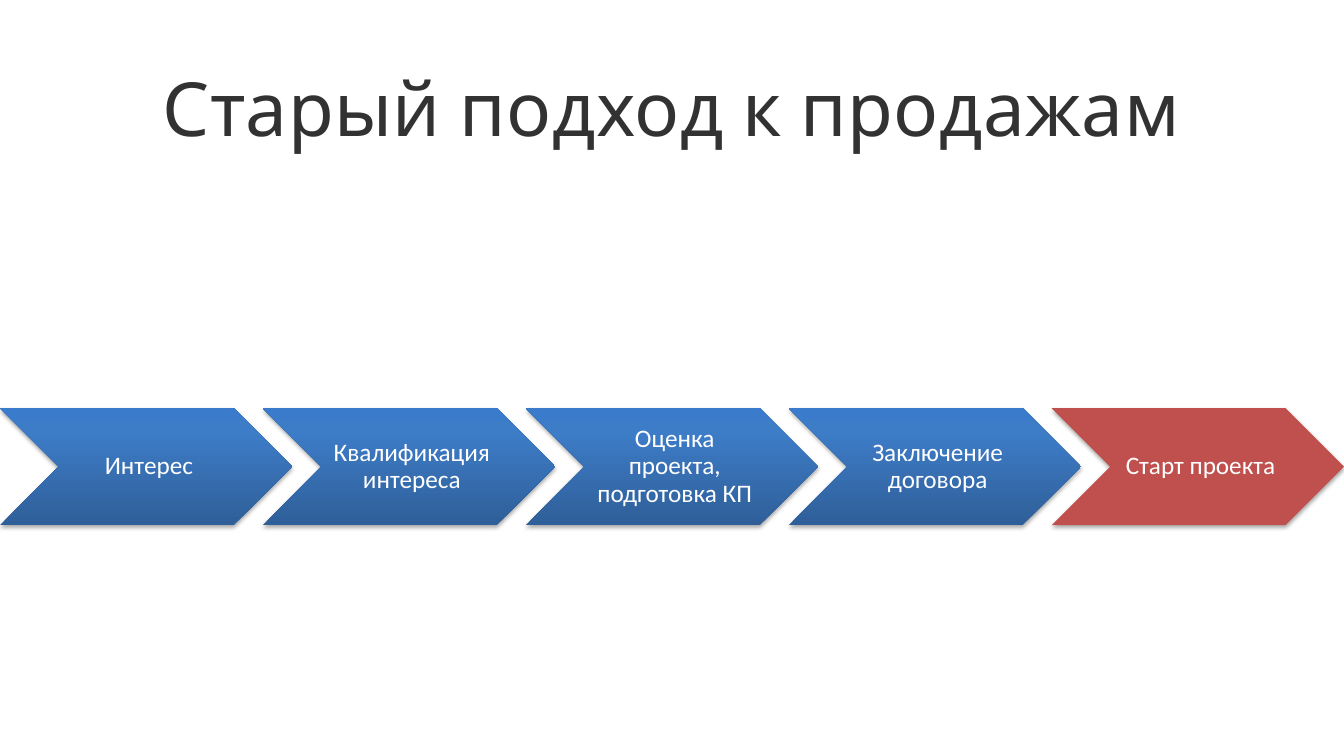
"""Build the slide on the old sales approach: a title over a five-step chevron chain."""
from copy import deepcopy
from dataclasses import dataclass

from lxml import etree
from pptx import Presentation
from pptx.dml.color import RGBColor
from pptx.enum.shapes import MSO_SHAPE
from pptx.enum.text import MSO_ANCHOR, PP_ALIGN
from pptx.oxml.ns import qn
from pptx.util import Pt

CHEVRON = MSO_SHAPE.CHEVRON
MIDDLE = MSO_ANCHOR.MIDDLE
CENTER = PP_ALIGN.CENTER


@dataclass(frozen=True)
class Theme:
    title_font: str = "Karla"
    title_size: float = 53.3
    title_color: str = "323232"
    step_font: str = "Calibri"
    step_size: float = 18
    step_color: str = "FFFFFF"
    step_gradient: tuple = ((0, "2F5F99"), (0.8, "3D7CC7"), (1, "3A7CCB"))
    start_fill: str = "C0504D"
    shadow: str = "000000"


THEME = Theme()
SLIDE_WIDTH, SLIDE_HEIGHT = 960, 540
STEP_TOP, STEP_WIDTH, STEP_HEIGHT = 291.6, 208.8, 83.5
STEPS = [
    "Интерес",
    "Квалификация интереса",
    "Оценка проекта, подготовка КП",
    "Заключение договора",
    "Старт проекта",
]


def write(shape, text, margins, spacing, font_name, size, color):
    frame = shape.text_frame
    frame.word_wrap = True
    frame.vertical_anchor = MIDDLE
    frame.margin_left, frame.margin_top, frame.margin_right, frame.margin_bottom = map(Pt, margins)
    frame.text = text
    paragraph = frame.paragraphs[0]
    paragraph.alignment = CENTER
    paragraph.line_spacing = spacing
    run = paragraph.runs[0]
    run.font.name = font_name
    run.font.size = Pt(size)
    run.font.color.rgb = RGBColor.from_string(color)
    return run


def add_shadow(shape):
    shape.shadow.inherit = False
    effects = shape._element.spPr.find(qn("a:effectLst"))
    outer = etree.SubElement(effects, qn("a:outerShdw"), blurRad=str(Pt(3.1)),
                             dist=str(Pt(1.8)), dir="5400000", rotWithShape="0")
    color = etree.SubElement(outer, qn("a:srgbClr"), val=THEME.shadow)
    etree.SubElement(color, qn("a:alpha"), val="35000")


deck = Presentation()
deck.slide_width, deck.slide_height = Pt(SLIDE_WIDTH), Pt(SLIDE_HEIGHT)
slide = deck.slides.add_slide(deck.slide_layouts[6])

title = slide.shapes.add_textbox(Pt(46), Pt(37.4), Pt(868), Pt(84.2))
title_run = write(title, "Старый подход к продажам", (14.4, 11.5, 14.4, 11.5), 0.95,
                  THEME.title_font, THEME.title_size, THEME.title_color)
title_run.font._element.set("spc", "40")

step_pitch = (SLIDE_WIDTH - STEP_WIDTH) / (len(STEPS) - 1)
for index, label in enumerate(STEPS):
    step = slide.shapes.add_shape(CHEVRON, Pt(index * step_pitch), Pt(STEP_TOP),
                                  Pt(STEP_WIDTH), Pt(STEP_HEIGHT))
    if index == len(STEPS) - 1:
        step.fill.solid()
        step.fill.fore_color.rgb = RGBColor.from_string(THEME.start_fill)
    else:
        step.fill.gradient()
        step.fill.gradient_angle = 90
        stop_list = step._element.spPr.find(qn("a:gradFill")).find(qn("a:gsLst"))
        stop_list.append(deepcopy(stop_list[-1]))
        for stop, (position, color) in zip(step.fill.gradient_stops, THEME.step_gradient):
            stop.position = position
            stop.color.rgb = RGBColor.from_string(color)
    step.line.fill.background()
    add_shadow(step)
    write(step, label, (6, 2, 2, 2), 0.9, THEME.step_font, THEME.step_size, THEME.step_color)

deck.save("out.pptx")
